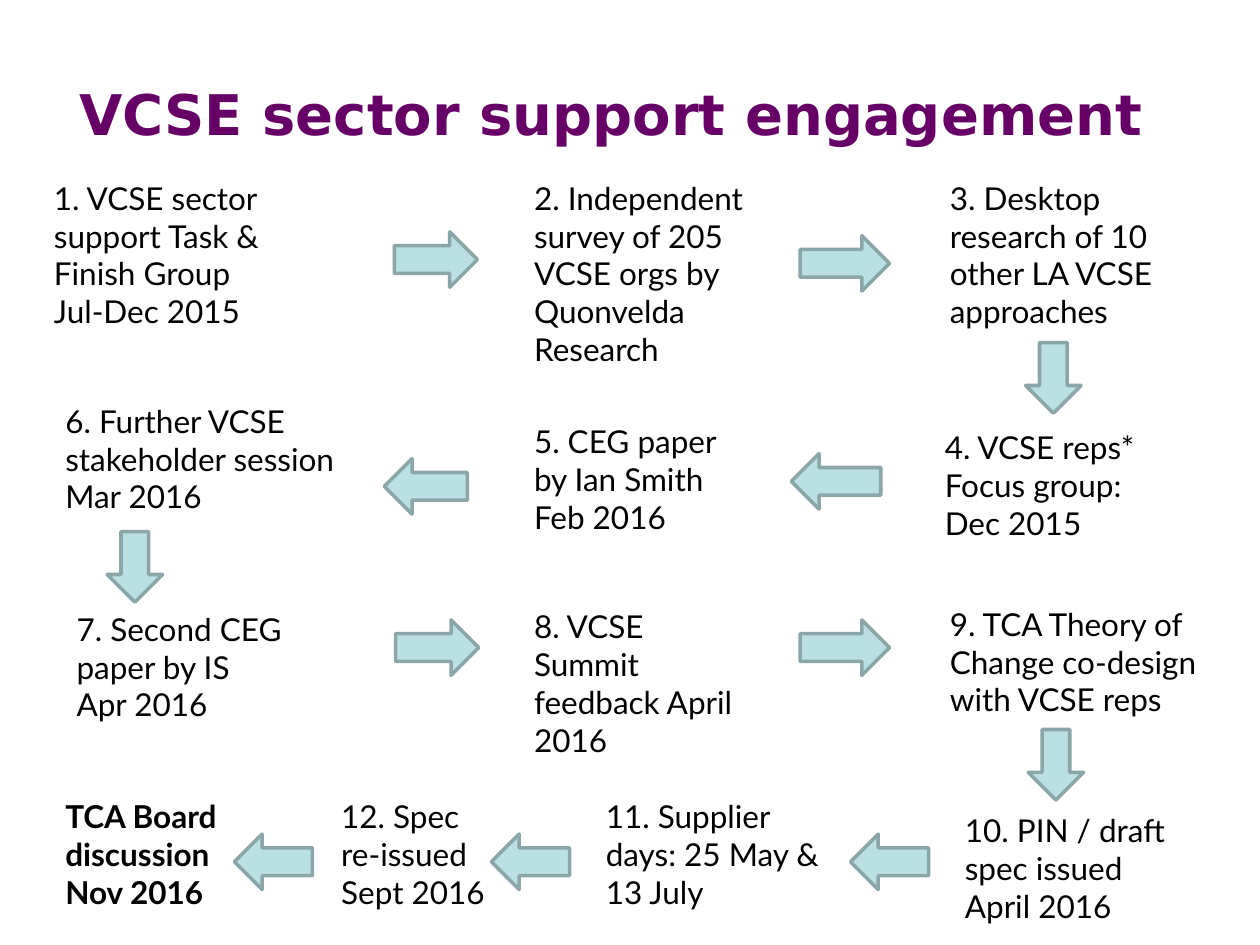
from pptx import Presentation
from pptx import util as u
from pptx.dml.color import RGBColor
from pptx.enum import shapes, text

PURPLE = RGBColor(0x66, 0x00, 0x66)
BLACK = RGBColor(0x00, 0x00, 0x00)
PALE_TEAL = RGBColor(0xBB, 0xE0, 0xE3)
GREY_TEAL = RGBColor(0x8A, 0xA6, 0xA8)

RIGHT, DOWN, LEFT = 0, 90, 180
ARROW_HEIGHT = 0.44


class FlowSlide:
    """Style and current slide of the engagement flow."""
    title_font = "DejaVu Sans"
    body_font = "Lato"

    def __init__(self, prs):
        self.s = prs.slides.add_slide(prs.slide_layouts[6])

    def text_box(self, box, content, font, size, color, bold=False):
        tb = self.s.shapes.add_textbox(*map(u.Inches, box))
        tf = tb.text_frame
        tf.word_wrap = True
        tf.text = content
        for p in tf.paragraphs:
            for r in p.runs:
                r.font.name = font
                r.font.size = u.Pt(size)
                r.font.bold = bold
                r.font.color.rgb = color
        return tf

    def title(self, box, content):
        tf = self.text_box(box, content, self.title_font, 32, PURPLE, True)
        tf.vertical_anchor = text.MSO_ANCHOR.MIDDLE

    def step(self, box, content, bold=False):
        tf = self.text_box(box, content, self.body_font, 18, BLACK, bold)
        tf.auto_size = text.MSO_AUTO_SIZE.SHAPE_TO_FIT_TEXT

    def arrow(self, left, top, length, direction):
        sp = self.s.shapes.add_shape(
            shapes.MSO_SHAPE.RIGHT_ARROW,
            *map(u.Inches, (left, top, length, ARROW_HEIGHT)))
        sp.rotation = direction
        sp.shadow.inherit = False
        sp.fill.solid()
        sp.fill.fore_color.rgb = PALE_TEAL
        sp.line.color.rgb = GREY_TEAL
        sp.line.width = u.Pt(2)


# Steps: box (left, top, width, height) and wording
STEPS = [
    ((0.33, 1.37, 2.48, 1.31),
     "1. VCSE sector support Task & Finish Group\nJul-Dec 2015"),
    ((4.14, 1.37, 2.21, 1.62),
     "2. Independent survey of 205 VCSE orgs by Quonvelda Research"),
    ((7.44, 1.37, 2.04, 1.31),
     "3. Desktop research of 10 other LA VCSE approaches"),
    ((7.4, 3.35, 1.93, 1.01), "4. VCSE reps* Focus group: Dec 2015"),
    ((4.14, 3.3, 1.93, 1.04), "5. CEG paper by Ian Smith\nFeb 2016"),
    ((0.42, 3.14, 2.39, 1.01),
     "6. Further VCSE stakeholder session Mar 2016"),
    ((0.51, 4.79, 2.23, 1.01), "7. Second CEG paper by IS\nApr 2016"),
    ((4.14, 4.77, 1.93, 1.31), "8. VCSE Summit feedback April 2016"),
    ((7.44, 4.75, 2.31, 1.01),
     "9. TCA Theory of Change co-design with VCSE reps"),
    ((7.56, 6.39, 1.93, 1.01), "10. PIN / draft spec issued April 2016"),
    ((4.71, 6.28, 2.04, 1.01), "11. Supplier days: 25 May & 13 July"),
    ((2.61, 6.28, 1.53, 1.01), "12. Spec\nre-issued Sept 2016"),
]
OUTCOME = ((0.42, 6.28, 1.74, 1.01), "TCA Board discussion Nov 2016")

# Arrows in reading order: left, top, length, direction
ARROWS = [
    (3.13, 1.84, 0.66, RIGHT), (6.35, 1.87, 0.71, RIGHT),
    (8.08, 2.78, 0.56, DOWN),
    (6.28, 3.6, 0.71, LEFT), (3.05, 3.64, 0.66, LEFT),
    (0.79, 4.28, 0.56, DOWN),
    (3.14, 4.92, 0.66, RIGHT), (6.35, 4.92, 0.71, RIGHT),
    (8.1, 5.85, 0.56, DOWN),
    (6.75, 6.62, 0.62, LEFT), (3.9, 6.62, 0.62, LEFT),
    (1.86, 6.62, 0.62, LEFT),
]


def main():
    prs = Presentation()
    prs.slide_width, prs.slide_height = u.Inches(10), u.Inches(7.5)
    flow = FlowSlide(prs)

    # Heading
    flow.title((0.53, 0.59, 9, 0.61), "VCSE sector support engagement")

    # Flow of steps, ending in the board discussion
    for box, content in STEPS:
        flow.step(box, content)
    flow.step(*OUTCOME, bold=True)
    for arrow in ARROWS:
        flow.arrow(*arrow)

    prs.save("out.pptx")


if __name__ == "__main__":
    main()
